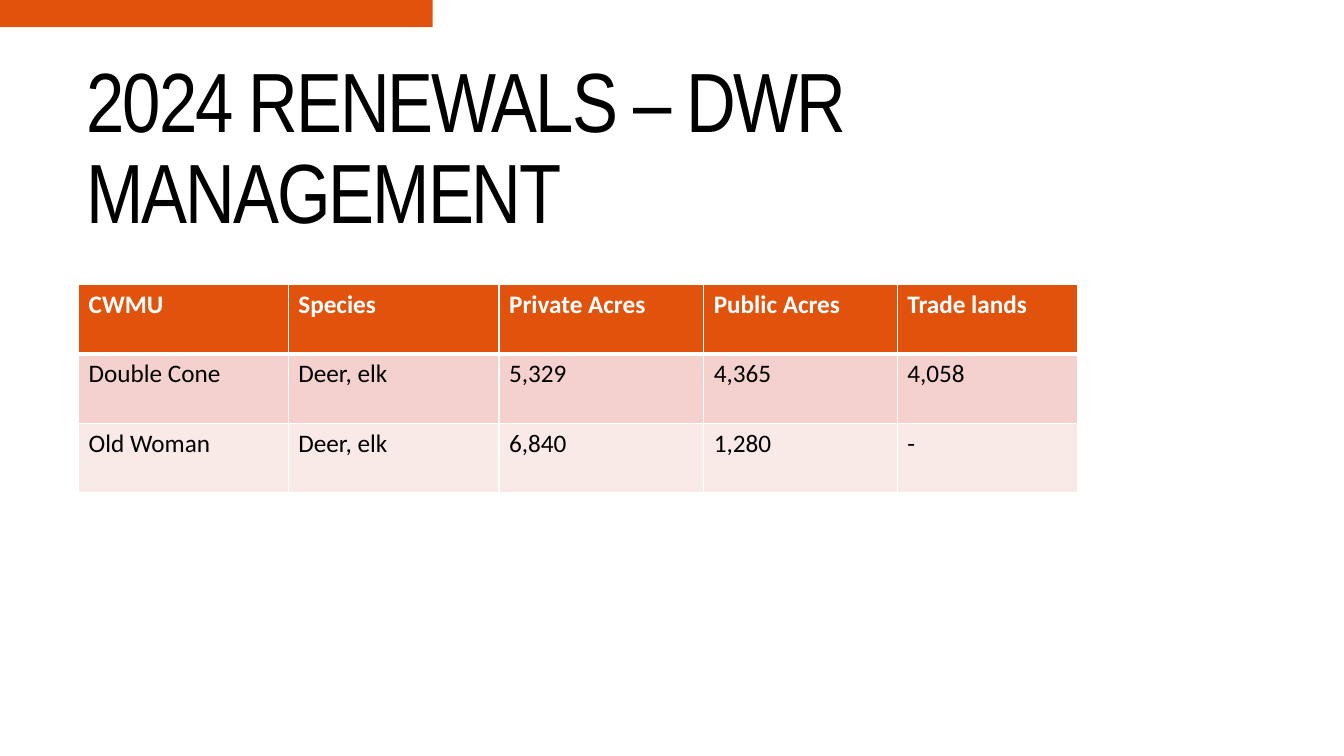
from lxml import etree
from pptx import Presentation
from pptx import util as u
from pptx.dml.color import RGBColor
from pptx.enum import shapes, text
from pptx.oxml.ns import qn


def paint(fill, color):
    fill.solid()
    fill.fore_color.rgb = RGBColor.from_string(color)


def add_border(cell, side, points):
    ln = etree.SubElement(cell._tc.get_or_add_tcPr(), qn("a:" + side), w=str(u.Pt(points)))
    solid = etree.SubElement(ln, qn("a:solidFill"))
    etree.SubElement(solid, qn("a:srgbClr"), val="FFFFFF")


prs = Presentation()
prs.slide_width = u.Inches(13.33)
prs.slide_height = u.Inches(7.5)
s = prs.slides.add_slide(prs.slide_layouts[5])

bar = s.shapes.add_shape(shapes.MSO_SHAPE.RECTANGLE, 0, 0, u.Inches(4.29), u.Inches(0.27))
bar.shadow.inherit = False
paint(bar.fill, "E1530D")
bar.line.fill.background()

title = s.shapes.title
title.left, title.top = u.Inches(0.76), u.Inches(0.32)
title.width, title.height = u.Inches(10.94), u.Inches(2.35)
tf = title.text_frame
tf.text = "2024 RENEWALS – DWR MANAGEMENT"
tf.word_wrap = True
tf.auto_size = text.MSO_AUTO_SIZE.NONE
tf.vertical_anchor = text.MSO_ANCHOR.MIDDLE
p = tf.paragraphs[0]
p.alignment = text.PP_ALIGN.LEFT
p.line_spacing = 0.9
r = p.runs[0]
r.font.name = "Arial Narrow"
r.font.size = u.Pt(60)
paint(r.font.fill, "000000")
r._r.get_or_add_rPr().set("spc", "-150")

rows = [
    ["CWMU", "Species", "Private Acres", "Public Acres", "Trade lands"],
    ["Double Cone", "Deer, elk", "5,329", "4,365", "4,058"],
    ["Old Woman", "Deer, elk", "6,840", "1,280", "-"],
]
widths = [2.08, 2.09, 2.03, 1.92, 1.79]
row_fills = ["E1530D", "F4D1CC", "F9E9E7"]
table = s.shapes.add_table(
    len(rows), len(widths), u.Inches(0.78), u.Inches(2.82), u.Inches(sum(widths)), u.Inches(2.07)
).table
for column, width in zip(table.columns, widths):
    column.width = u.Inches(width)

for i, values in enumerate(rows):
    table.rows[i].height = u.Inches(0.69)
    for j, value in enumerate(values):
        cell = table.cell(i, j)
        cell.text_frame.text = value
        font = cell.text_frame.paragraphs[0].runs[0].font
        font.name = "Calibri"
        font.size = u.Pt(18)
        font.bold = i == 0
        paint(font.fill, "FFFFFF" if i == 0 else "000000")
        add_border(cell, "lnL", 1)
        add_border(cell, "lnR", 1)
        add_border(cell, "lnT", 3 if i == 1 else 1)
        add_border(cell, "lnB", 3 if i == 0 else 1)
        paint(cell.fill, row_fills[i])

prs.save("out.pptx")
